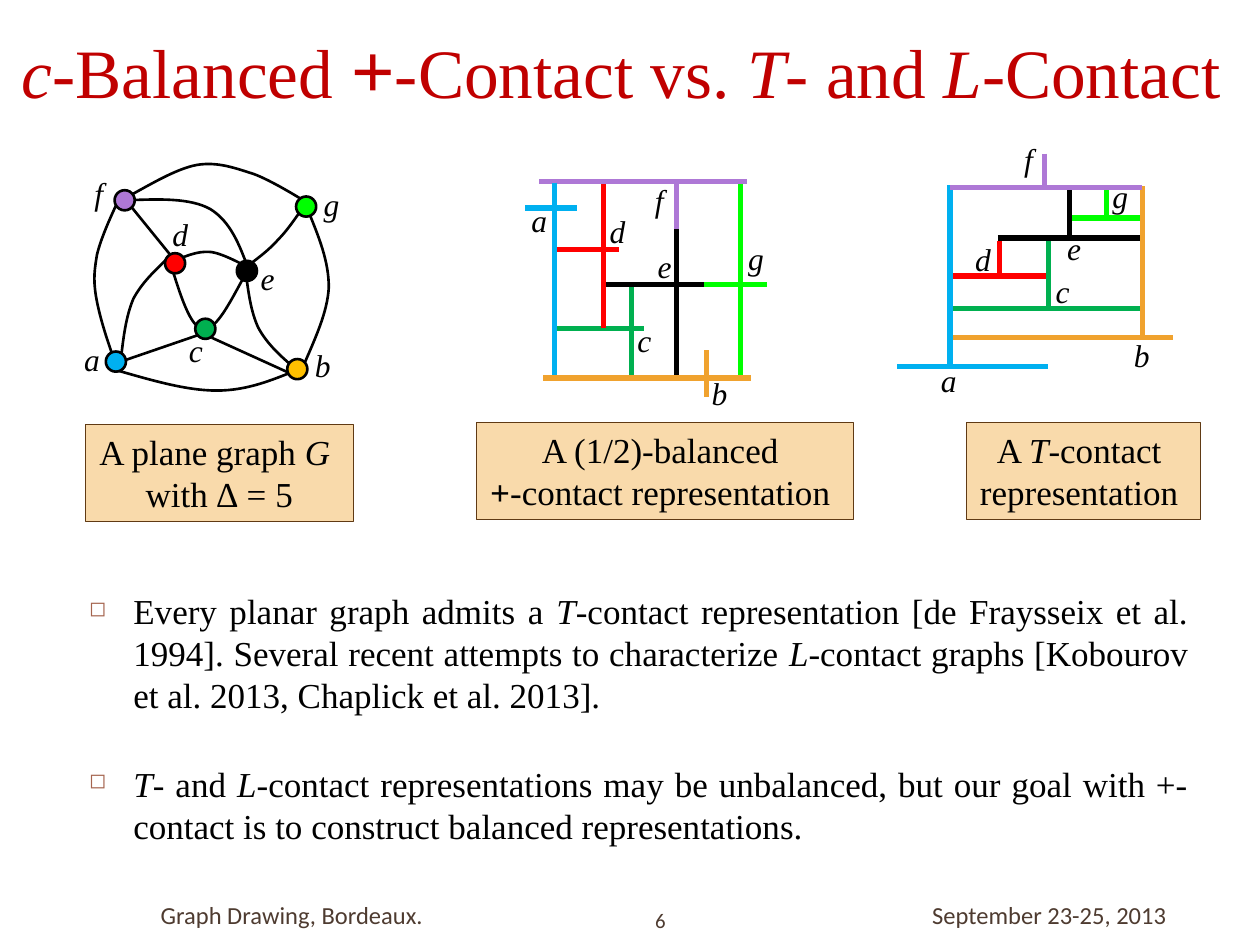
"""Build a slide comparing balanced plus-contact with T- and L-contact representations."""
from lxml import etree
from pptx import Presentation
from pptx.dml.color import RGBColor
from pptx.enum.shapes import MSO_CONNECTOR, MSO_SHAPE
from pptx.enum.text import MSO_ANCHOR, MSO_AUTO_SIZE, PP_ALIGN
from pptx.oxml.ns import qn
from pptx.util import Inches, Pt

LINE, RECT, OVAL = MSO_CONNECTOR.STRAIGHT, MSO_SHAPE.RECTANGLE, MSO_SHAPE.OVAL
TOP, MIDDLE = MSO_ANCHOR.TOP, MSO_ANCHOR.MIDDLE
LEFT, RIGHT = PP_ALIGN.LEFT, PP_ALIGN.RIGHT
CENTER, JUSTIFY = PP_ALIGN.CENTER, PP_ALIGN.JUSTIFY
FIT, FIXED = MSO_AUTO_SIZE.SHAPE_TO_FIT_TEXT, MSO_AUTO_SIZE.NONE

BLACK = RGBColor(0, 0, 0)
CRIMSON = RGBColor(0xC0, 0, 0)
BROWN = RGBColor(0x4E, 0x3B, 0x30)
RUST = RGBColor(0xA5, 0x64, 0x4E)
CREAM = RGBColor(0xF9, 0xDA, 0xAB)
EDGE = RGBColor(0x60, 0x3A, 0x14)
GOLD = RGBColor(0xFF, 0xC0, 0)
HUES = {
    "a": RGBColor(0, 0xB0, 0xF0), "b": RGBColor(0xF0, 0xA2, 0x2E),
    "c": RGBColor(0, 0xB0, 0x50), "d": RGBColor(0xFF, 0, 0),
    "e": BLACK, "f": RGBColor(0xAE, 0x78, 0xD6), "g": RGBColor(0, 0xFF, 0),
}
WIDTHS = dict(a=0.34, b=0.33, c=0.31, d=0.34, e=0.31, f=0.27, g=0.33)
SERIF, SANS = "Times New Roman", "Calibri"
ITALIC, BOLD = {"italic": True}, {"bold": True}
BIG = {"bold": True, "size": Pt(44.1)}
T, L = ("T", ITALIC), ("L", ITALIC)

TITLE = [("c-", ITALIC), "Balanced ", ("+", BIG), "-Contact vs. ", T, "- and ", L, "-Contact "]
BULLETS = [
    ["Every planar graph admits a ", T,
     "-contact representation [de Fraysseix et al. 1994]. Several recent attempts to characterize ",
     L, "-contact graphs [Kobourov et al. 2013, Chaplick et al. 2013]. "],
    [T, "- and ", L, "-contact representations may be unbalanced, but our goal with "
     "+-contact is to construct balanced representations."],
]
CAPTIONS = [
    ((0.68, 3.37, 2.12, 0.77), [["A plane graph ", ("G ", ITALIC)], ["with ∆ = 5"]]),
    ((3.78, 3.35, 2.99, 0.77), [["A (1/2)-balanced "], [("+", BOLD), "-contact representation "]]),
    ((7.67, 3.35, 1.86, 0.77), [["A ", T, "-contact "], ["representation "]]),
]
FOOTERS = [
    ((0.67, 7.06, 2.83, 0.4), "Graph Drawing, Bordeaux. ", 14, RIGHT),
    ((5.1, 7.17, 0.58, 0.27), "6", 11.9, LEFT),
    ((7.3, 7.06, 2.28, 0.4), "September 23-25, 2013", 14, LEFT),
]
NODES = {"f": (0.91, 1.51), "a": (0.84, 2.79), "g": (2.35, 1.56), "b": (2.28, 2.85),
         "d": (1.31, 2.01), "e": (1.88, 2.07), "c": (1.55, 2.53)}
EDGES = [(1, 1.59, 1.39, 2.07), (0.96, 2.87, 1.6, 2.65), (2.34, 2.98, 1.68, 2.68)]
CURVES = [
    [(0.89, 2.81), (0.83, 2.64), (0.78, 2.47), (0.76, 2.34), (0.74, 2.21), (0.75, 2.14),
     (0.77, 2.02), (0.8, 1.9), (0.86, 1.76), (0.93, 1.61)],
    [(1, 1.57), (1.2, 1.46), (1.4, 1.34), (1.56, 1.31), (1.73, 1.28), (1.88, 1.34),
     (2.01, 1.38), (2.15, 1.43), (2.39, 1.58), (2.39, 1.58)],
    [(0.93, 2.94), (1.21, 3.02), (1.48, 3.1), (1.72, 3.1), (1.96, 3.1), (2.15, 3.02), (2.35, 2.94)],
    [(2.45, 1.68), (2.53, 1.88), (2.61, 2.07), (2.61, 2.28), (2.6, 2.48), (2.5, 2.69), (2.41, 2.9)],
    [(0.96, 2.85), (0.98, 2.68), (1, 2.51), (1.06, 2.37), (1.13, 2.24), (1.23, 2.15), (1.32, 2.06)],
    [(1.01, 1.59), (1.26, 1.58), (1.51, 1.57), (1.67, 1.66), (1.83, 1.76), (1.9, 1.94), (1.97, 2.13)],
    [(2.35, 2.93), (2.23, 2.83), (2.12, 2.73), (2.05, 2.6), (1.99, 2.47), (1.97, 2.31), (1.95, 2.15)],
    [(1.35, 2.08), (1.43, 2.34), (1.51, 2.6), (1.61, 2.61), (1.71, 2.63), (1.82, 2.41), (1.94, 2.19)],
    [(1.36, 2.08), (1.46, 2.04), (1.56, 1.99), (1.67, 2), (1.77, 2.01), (1.94, 2.11),
     (1.99, 2.13), (2.04, 2.16), (2, 2.15), (1.96, 2.14)],
    [(1.98, 2.1), (2.06, 2.04), (2.14, 1.98), (2.21, 1.9), (2.28, 1.83), (2.34, 1.74), (2.41, 1.64)],
]
NAMES = {"a": (0.57, 2.65), "d": (1.27, 1.66), "f": (0.65, 1.33), "g": (2.47, 1.42),
         "e": (1.97, 2.01), "c": (1.4, 2.58), "b": (2.4, 2.7)}
PLUS_BARS = [
    ("c", 5.01, 2.25, 5.01, 3), ("d", 4.4, 1.98, 4.91, 1.98), ("a", 4.17, 1.65, 4.58, 1.65),
    ("c", 4.4, 2.61, 5.11, 2.61), ("e", 4.81, 2.26, 5.59, 2.26), ("g", 5.59, 2.26, 6.09, 2.26),
    ("f", 4.28, 1.44, 5.93, 1.44), ("a", 4.4, 1.45, 4.4, 2.98), ("d", 4.79, 1.46, 4.79, 2.6),
    ("e", 5.37, 1.79, 5.37, 2.98), ("g", 5.88, 1.46, 5.88, 3.01), ("f", 5.37, 1.45, 5.37, 1.82),
    ("b", 4.31, 3, 5.96, 3), ("b", 5.61, 2.78, 5.61, 3.15),
]
PLUS_NAMES = {"g": (5.84, 1.85), "e": (5.12, 1.91), "f": (5.1, 1.39), "d": (4.74, 1.63),
              "c": (4.96, 2.5), "b": (5.55, 2.92), "a": (4.12, 1.55)}
TEE_BARS = [
    ("d", 7.54, 2.19, 8.33, 2.19), ("d", 7.93, 1.91, 7.93, 2.19), ("c", 8.32, 1.91, 8.32, 2.45),
    ("c", 7.55, 2.45, 9.06, 2.45), ("g", 8.78, 1.47, 8.78, 1.74), ("g", 8.51, 1.73, 9.07, 1.73),
    ("a", 7.12, 2.91, 8.32, 2.91), ("a", 7.54, 1.47, 7.54, 2.91), ("b", 7.56, 2.68, 9.31, 2.68),
    ("b", 9.07, 1.48, 9.07, 2.67), ("e", 8.49, 1.48, 8.49, 1.9), ("e", 7.92, 1.89, 9.05, 1.89),
    ("f", 8.29, 1.22, 8.29, 1.5), ("f", 7.54, 1.49, 9.06, 1.49),
]
TEE_NAMES = {"a": (7.37, 2.82), "b": (8.9, 2.62), "c": (8.28, 2.11), "d": (7.64, 1.86),
             "f": (8.03, 1.06), "e": (8.37, 1.77), "g": (8.73, 1.36)}


def inch(vals):
    return [Inches(v) for v in vals]


def apply(obj, form):
    for key, val in form.items():
        setattr(obj, key, val)


def write(shape, paras, size, hue=BLACK, face=SERIF, align=LEFT, **frame):
    text = shape.text_frame
    apply(text, {"word_wrap": True, "auto_size": FIXED, "vertical_anchor": TOP, **frame})
    for num, runs in enumerate(paras):
        para = text.add_paragraph() if num else text.paragraphs[0]
        para.alignment = align
        for part in runs:
            words, form = (part, {}) if isinstance(part, str) else part
            run = para.add_run()
            run.text = words
            base = {"name": face, "size": Pt(size), "bold": False, "italic": False}
            apply(run.font, {**base, **form})
            run.font.color.rgb = hue
    return text


def stroke(shape, hue, width):
    shape.line.color.rgb = hue
    shape.line.width = Pt(width)


def paint(shape, fill, hue, width):
    shape.shadow.inherit = False
    shape.fill.solid()
    shape.fill.fore_color.rgb = fill
    stroke(shape, hue, width)


def bar(home, ends, hue, width):
    line = home.add_connector(LINE, *inch(ends))
    stroke(line, hue, width)
    etree.SubElement(line._element.spPr, qn("a:effectLst"))


def bend(home, knots):
    pen = home.build_freeform(*inch(knots[0]))
    pen.add_line_segments([inch(k) for k in knots[1:]], close=False)
    curve = pen.convert_to_shape()
    legs = list(curve._element.iter(qn("a:lnTo")))
    track = legs[0].getparent()
    for i in range(0, len(legs), 3):
        cubic = etree.SubElement(track, qn("a:cubicBezTo"))
        for leg in legs[i:i + 3]:
            cubic.append(leg[0])
            track.remove(leg)
    curve.shadow.inherit = False
    curve.fill.background()
    stroke(curve, BLACK, 1.5)


def label(home, names):
    for key, spot in names.items():
        box = home.add_textbox(*inch((*spot, WIDTHS[key], 0.4)))
        write(box, [[(key, ITALIC)]], 18, word_wrap=False, auto_size=FIT)


def contact(home, bars, names):
    for key, *ends in bars:
        bar(home, ends, HUES[key], 3)
    label(home, names)


def bullet(para):
    props = para._p.get_or_add_pPr()
    for key, val in {"marL": Inches(0.35), "indent": -Inches(0.35)}.items():
        props.set(key, str(val))
    tint = etree.SubElement(props, qn("a:buClr"))
    etree.SubElement(tint, qn("a:srgbClr"), val=str(RUST))
    etree.SubElement(props, qn("a:buSzPct"), val="60000")
    etree.SubElement(props, qn("a:buChar"), char="◻")


def main():
    deck = Presentation()
    deck.slide_width, deck.slide_height = inch((10, 7.5))
    slide = deck.slides.add_slide(deck.slide_layouts[5])
    home = slide.shapes
    head = home.title
    apply(head, dict(zip(("left", "top", "width", "height"), inch((0, 0, 10, 1.08)))))
    write(head, [TITLE], 39.6, CRIMSON, align=CENTER, vertical_anchor=MIDDLE)

    body = write(home.add_textbox(*inch((0.61, 1.18, 8.92, 6.16))), BULLETS, 20,
                 align=JUSTIFY, margin_top=Inches(3.5))
    for para in body.paragraphs:
        bullet(para)
    body.paragraphs[1].space_before = Pt(26.5)

    for spot, words, size, align in FOOTERS:
        write(home.add_textbox(*inch(spot)), [[words]], size, BROWN, SANS, align,
              vertical_anchor=MIDDLE)

    contact(home.add_group_shape().shapes, TEE_BARS, TEE_NAMES)
    for knots in CURVES:
        bend(home, knots)
    for ends in EDGES:
        bar(home, ends, BLACK, 1.5)
    for key, spot in NODES.items():
        node = home.add_shape(OVAL, *inch((*spot, 0.16, 0.16)))
        paint(node, GOLD if key == "b" else HUES[key], BLACK, 1.5)
    label(home, NAMES)
    contact(home, PLUS_BARS, PLUS_NAMES)

    for spot, paras in CAPTIONS:
        box = home.add_shape(RECT, *inch(spot))
        paint(box, CREAM, EDGE, 0.25)
        write(box, paras, 20, align=CENTER, word_wrap=False, auto_size=FIT)
    deck.save("out.pptx")


if __name__ == "__main__":
    main()
